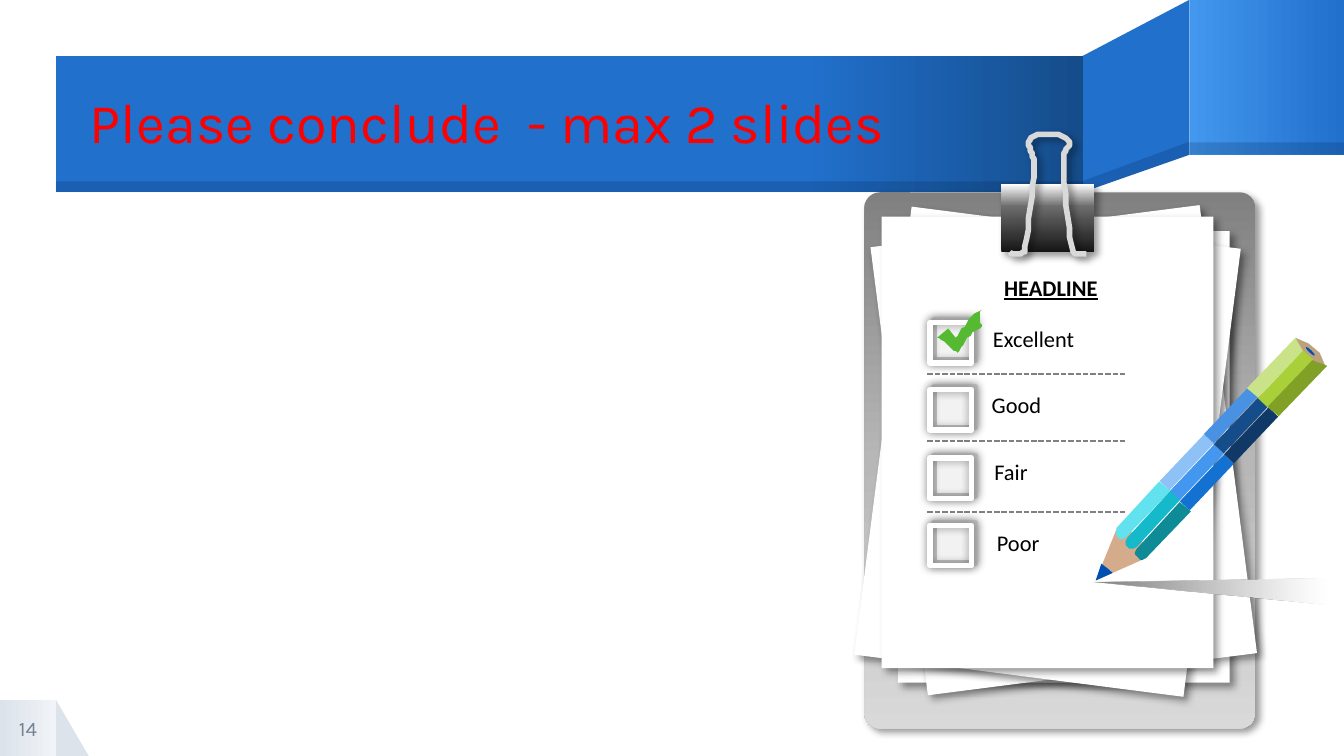
from pptx import Presentation
from pptx.dml.color import RGBColor as RGB
from pptx.enum.dml import MSO_LINE as DASH
from pptx.enum.shapes import MSO_CONNECTOR as LINK, MSO_SHAPE as KIND
from pptx.enum.text import MSO_ANCHOR as ANCHOR, MSO_AUTO_SIZE as FIT, PP_ALIGN as ALIGN
from pptx.oxml import parse_xml
from pptx.oxml.ns import nsdecls, qn
from pptx.util import Pt

WHITE, BLACK, RED = RGB(255, 255, 255), RGB(0, 0, 0), RGB(255, 0, 0)
BLUE, SKY, NAVY = RGB(0x21, 0x70, 0xCC), RGB(0x43, 0x97, 0xEE), RGB(0x15, 0x4C, 0x8A)
EDGE, LEAD = RGB(0, 0x1F, 0x46), RGB(0, 0x50, 0xB4)
MIST, PALE, SLATE = RGB(0xDD, 0xE3, 0xEB), RGB(0xF0, 0xF3, 0xF7), RGB(0x74, 0x83, 0x94)
GRAY, MID_GRAY, SILVER = RGB(0x80, 0x80, 0x80), RGB(0xB7, 0xB7, 0xB7), RGB(0xD9, 0xD9, 0xD9)
SMOKE, LIGHT, FRAME = RGB(0xE5, 0xE5, 0xE5), RGB(0xF2, 0xF2, 0xF2), RGB(0xBF, 0xBF, 0xBF)
COAL, IRON = RGB(0x15, 0x15, 0x15), RGB(0x6B, 0x6B, 0x6B)
LIME, GREEN, OLIVE = RGB(0xCB, 0xE3, 0x88), RGB(0xA9, 0xD0, 0x39), RGB(0x81, 0xA1, 0x26)
TAN, WOOD, TICK = RGB(0xBB, 0xA1, 0x7C), RGB(0xD4, 0xAC, 0x8C), RGB(0x55, 0xB9, 0x31)
LOWER_BAND = [RGB(0x8E, 0xC1, 0xF5), SKY, RGB(0x13, 0x71, 0xD2)]
UPPER_BAND = [RGB(0x48, 0x91, 0xE3), NAVY, RGB(0x10, 0x39, 0x68)]
SLEEVES = [RGB(0x62, 0xE2, 0xEF), RGB(0x14, 0xB9, 0xCA), RGB(0x0F, 0x8B, 0x98)]
DROP, GLOW = (4, 3, 45), (5, 0, 0)
TILT = 313.5

deck = Presentation()
deck.slide_width, deck.slide_height = Pt(720), Pt(405)
slide = deck.slides.add_slide(deck.slide_layouts[5])
shapes = slide.shapes


def draw(outline, fill=None, angle=0, rotation=0, shadow=None, line=None, closed=True):
    if isinstance(outline[0], tuple):
        builder = shapes.build_freeform(*outline[0], scale=Pt(1))
        builder.add_line_segments(outline[1:], close=closed)
        shape = builder.convert_to_shape()
    else:
        shape = shapes.add_shape(outline[0], *[Pt(value) for value in outline[1:]])
    shape.rotation = rotation
    shape.fill.background()
    shape.line.fill.background()
    shape.shadow.inherit = False
    properties = shape.element.spPr
    if isinstance(fill, RGB):
        shape.fill.solid()
        shape.fill.fore_color.rgb = fill
    elif fill:
        stops = "".join(
            f'<a:gs pos="{place * 1000}"><a:srgbClr val="{color}">'
            f'<a:alpha val="{alpha * 1000}"/></a:srgbClr></a:gs>'
            for place, color, alpha in fill)
        properties.replace(properties.find(qn("a:noFill")), parse_xml(
            f'<a:gradFill {nsdecls("a")} rotWithShape="1"><a:gsLst>{stops}</a:gsLst>'
            f'<a:lin ang="{angle * 60000}" scaled="0"/></a:gradFill>'))
    if line:
        shape.line.color.rgb, shape.line.width = line, Pt(3)
    if shadow:
        blur, distance, direction = shadow
        properties.find(qn("a:effectLst")).append(parse_xml(
            f'<a:outerShdw {nsdecls("a")} blurRad="{Pt(blur)}" dist="{Pt(distance)}" '
            f'dir="{direction * 60000}" algn="ctr" rotWithShape="0">'
            '<a:srgbClr val="000000"><a:alpha val="40000"/></a:srgbClr></a:outerShdw>'))
    return shape


def trace(start, curves, steps=10):
    points = [start]
    for curve in curves:
        corners = [points[-1], *curve]
        for step in range(1, steps + 1):
            t = step / steps
            weights = ((1 - t) ** 3, 3 * t * (1 - t) ** 2, 3 * t * t * (1 - t), t ** 3)
            points.append(tuple(
                round(sum(w * corner[axis] for w, corner in zip(weights, corners)), 2)
                for axis in (0, 1)))
    return points


draw((KIND.RIGHT_TRIANGLE, 30, 375, 17.5, 30), MIST)
draw((KIND.RECTANGLE, 0, 375, 30, 30), [(0, MIST, 100), (100, PALE, 100)])
draw([(637.2, 0), (580.5, 30), (580.5, 103), (637.2, 82.8)], BLUE)
draw((KIND.RECTANGLE, 637.2, 0, 82.8, 82.8), [(0, SKY, 100), (100, BLUE, 100)])
draw((KIND.RECTANGLE, 30, 30, 550.5, 73), [(0, BLUE, 100), (73, BLUE, 100), (100, NAVY, 100)])
for outline in [
    [(637.2, 76.3), (580.5, 97.2), (580.5, 103), (637.2, 82.8)],
    (KIND.RECTANGLE, 637.2, 76.3, 82.8, 6.5),
    (KIND.RECTANGLE, 30, 97.2, 550.5, 5.8),
]:
    draw(outline, [(0, EDGE, 20), (100, EDGE, 20)])

title = shapes.title
shapes.element.append(title.element)
title.left, title.top, title.width, title.height = Pt(48.2), Pt(31), Pt(532), Pt(72.7)

board = draw((KIND.ROUNDED_RECTANGLE, 463, 103, 209.5, 287.3),
             [(0, GRAY, 100), (50, MID_GRAY, 100), (100, SILVER, 100)], 90, shadow=DROP)
board.adjustments[0] = 0.04
for left, top, turn in [(481, 123.8, 0), (481, 120.2, 352.7), (472.3, 121, 7.3), (472.3, 116, 0)]:
    draw((KIND.RECTANGLE, left, top, 177.8, 242), WHITE, rotation=turn, shadow=DROP)

draw((KIND.RECTANGLE, 536.4, 98.6, 49.7, 36.7),
     [(0, COAL, 100), (67, IRON, 100), (100, WHITE, 100)], 270, shadow=DROP)
wire = trace((540.7, 135.4), [
    [(543.6, 136.8), (545, 136.8), (548.6, 134.6)],
    [(550.8, 126.7), (553.7, 96.5), (554.4, 86.4)],
    [(553, 81.4), (550.1, 78.5), (551.5, 74.9)],
    [(553, 71.3), (569.5, 70.6), (572.4, 74.9)],
    [(574.6, 78.5), (570.2, 79.2), (569.5, 85)],
    [(570.2, 95), (572.4, 126), (574.6, 134.6)],
    [(577.4, 137.5), (580.3, 136.1), (581.8, 136.1)],
])
draw(wire, shadow=DROP, line=SILVER, closed=False)

draw([(711.4, 309.6), (586.1, 312.5), (710.6, 324)],
     [(0, GRAY, 100), (74, SMOKE, 100), (100, LIGHT, 0)])
for left, top, colors in [(618.5, 244.1, LOWER_BAND), (642.2, 218.9, UPPER_BAND)]:
    for index, color in enumerate(colors):
        shift = index * 5.4
        draw((KIND.RECTANGLE, left + shift, top + shift, 34.6, 7.2), color, rotation=TILT)
draw([(694.8, 187.9), (694.1, 180.7), (701.3, 183.6), (707, 189.4), (709.9, 195.8),
      (702.7, 195.8)], TAN)
draw([(697.7, 187.9), (694.1, 180.7), (668.2, 208.1), (673.9, 213.1)], LIME)
draw((KIND.RECTANGLE, 671, 199.4, 35.3, 7.2), GREEN, rotation=TILT)
draw([(710.6, 195.8), (703.4, 193), (679, 218.2), (684.7, 223.2)], OLIVE)
draw((KIND.OVAL, 701.3, 185, 1.4, 6.5), LEAD, rotation=TILT)
draw([(614.2, 298.8), (586.8, 311), (597.6, 283.7), (601.2, 280.1), (617, 295.2)], WOOD)
sleeve = [(621.4, 257.8), (598.3, 283), (597.6, 285.1), (597.6, 286.6), (599.8, 288.7),
          (601.2, 288.7), (603.4, 288), (627.1, 262.8)]
for index, color in enumerate(SLEEVES):
    draw([(x + index * 5.4, y + index * 5.4) for x, y in sleeve], color)
draw([(594, 304.6), (590.4, 301.7), (586.8, 311), (596.2, 306.7)], LEAD)

for y in (200.2, 236.2, 274.3):
    rule = shapes.add_connector(LINK.STRAIGHT, Pt(496.8), Pt(y), Pt(602.6), Pt(y))
    rule.line.color.rgb, rule.line.width = GRAY, Pt(1)
    rule.line.dash_style = DASH.SQUARE_DOT
    rule.element.spPr.append(parse_xml(f'<a:effectLst {nsdecls("a")}/>'))

for top in (171.4, 207.4, 244.1, 280.1):
    draw((KIND.RECTANGLE, 500.4, top, 22.3, 21.6), LIGHT, shadow=GLOW, line=FRAME)
    draw((KIND.RECTANGLE, 498.2, top + 1.4, 22.3, 21.6), shadow=GLOW, line=WHITE)
tick = trace((511.9, 181.4), [
    [(516.2, 176.4), (518.4, 169.2), (525.6, 166.3)],
    [(524.2, 169.2), (524.9, 172.8), (526.3, 175)],
    [(520.6, 177.8), (515.5, 184.3), (512.6, 189.4)],
    [(509.8, 186.5), (506.2, 182.2), (501.8, 180.7)],
])
draw(tick + [(508.3, 176.4)], TICK)

plain = dict(name="Calibri", size=Pt(12))
heading = dict(plain, bold=True, underline=True)
texts = [(title, "Please conclude  - max 2 slides", ALIGN.LEFT, RED,
          dict(name="Karla", size=Pt(30)))]
for words, left, top, width, height, align, color, font in [
    ("14", 0, 375, 30, 30, ALIGN.CENTER, SLATE, dict(name="Karla", size=Pt(11))),
    ("HEADLINE", 486.7, 143.3, 152.6, 15, ALIGN.CENTER, BLACK, heading),
    ("Excellent", 524.9, 170.6, 103, 15, ALIGN.LEFT, BLACK, plain),
    ("Good", 524.2, 205.9, 103, 15, ALIGN.LEFT, BLACK, plain),
    ("Fair", 525.6, 241.9, 103, 15, ALIGN.LEFT, BLACK, plain),
    ("Poor", 527, 280, 103, 15, ALIGN.LEFT, BLACK, plain),
]:
    box = shapes.add_textbox(Pt(left), Pt(top), Pt(width), Pt(height))
    texts.append((box, words, align, color, font))

for box, words, align, color, font in texts:
    frame = box.text_frame
    layout = dict(word_wrap=True, auto_size=FIT.SHAPE_TO_FIT_TEXT)
    if font["name"] == "Karla":
        layout = dict(word_wrap=True, auto_size=FIT.NONE, vertical_anchor=ANCHOR.MIDDLE,
                      margin_left=0, margin_top=0, margin_right=0, margin_bottom=0)
    for key, value in layout.items():
        setattr(frame, key, value)
    para = frame.paragraphs[0]
    para.alignment = align
    span = para.add_run()
    span.text = words
    span.font.color.rgb = color
    for key, value in font.items():
        setattr(span.font, key, value)
title.text_frame.paragraphs[0].line_spacing = 0.9

deck.save("out.pptx")
